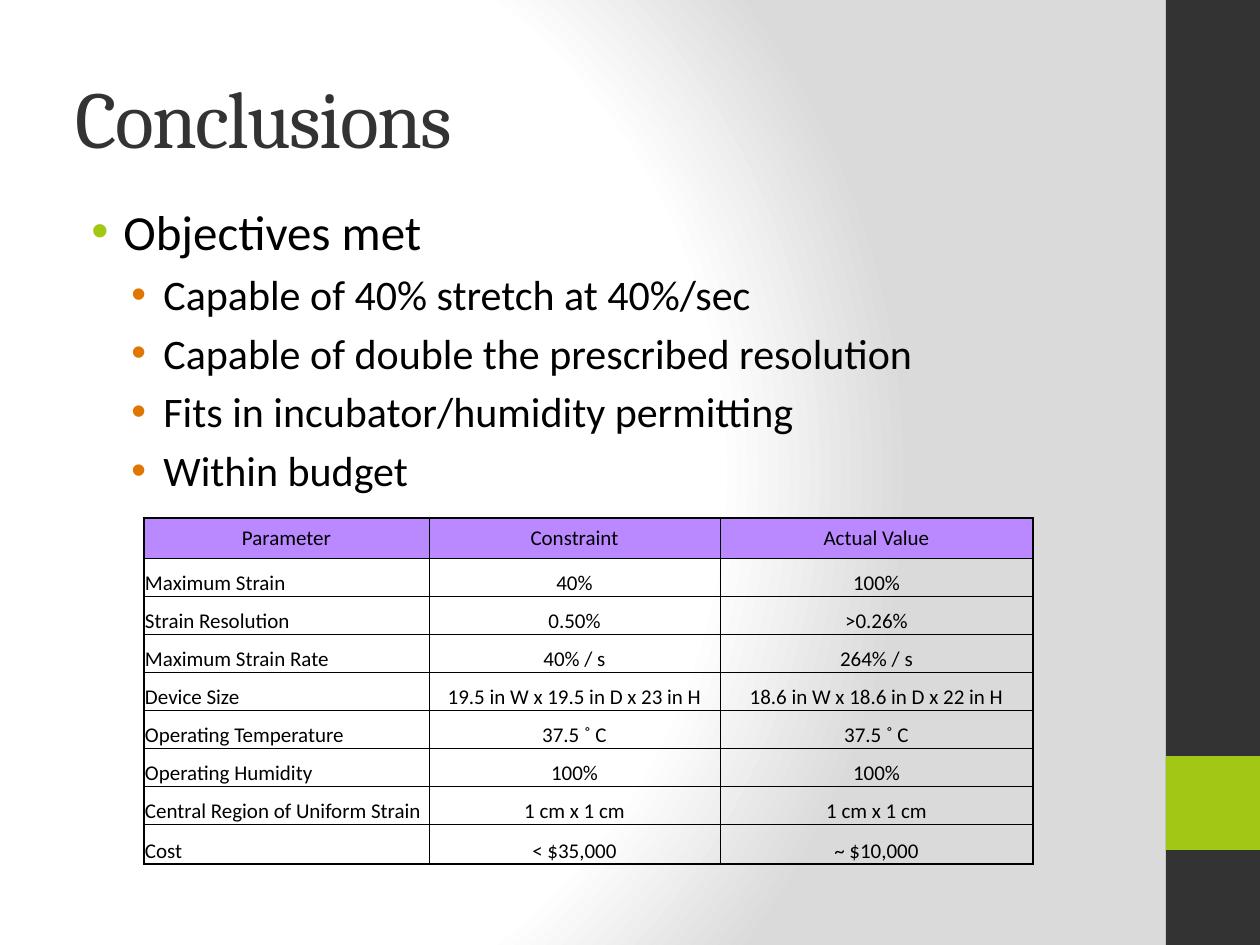
from pptx import Presentation
from pptx.dml.color import RGBColor
from pptx.enum.shapes import MSO_SHAPE
from pptx.enum.text import MSO_ANCHOR, MSO_AUTO_SIZE, PP_ALIGN
from pptx.oxml import parse_xml
from pptx.oxml.ns import nsdecls, qn
from pptx.util import Emu, Pt

RECTANGLE = MSO_SHAPE.RECTANGLE
MIDDLE, BOTTOM = MSO_ANCHOR.MIDDLE, MSO_ANCHOR.BOTTOM
LEFT, CENTER = PP_ALIGN.LEFT, PP_ALIGN.CENTER

BLACK = RGBColor(0x00, 0x00, 0x00)
CHARCOAL = RGBColor(0x33, 0x33, 0x33)
LIME = RGBColor(0xA2, 0xC8, 0x16)
ORANGE = RGBColor(0xE0, 0x76, 0x02)
PURPLE = RGBColor(0xBA, 0x89, 0xFF)
WHITE = RGBColor(0xFF, 0xFF, 0xFF)
GRAY = RGBColor(0xDA, 0xDA, 0xDA)


def px(length):
    return Emu(round(length * 914400 / 126))


def add_run(paragraph, text, font_name, size, color):
    run = paragraph.add_run()
    run.text = text
    run.font.name = font_name
    run.font.size = Pt(size)
    run.font.color.rgb = color
    return run


prs = Presentation()
prs.slide_width, prs.slide_height = px(1260), px(945)
slide = prs.slides.add_slide(prs.slide_layouts[5])

# Background: white glow fading to gray on the right
slide.background.fill.gradient()
gradient = slide.element.find(".//" + qn("a:gradFill"))
stops = "".join(
    f'<a:gs pos="{position * 1000}"><a:srgbClr val="{color}"/></a:gs>'
    for position, color in ((0, WHITE), (75, WHITE), (100, GRAY)))
gradient.getparent().replace(gradient, parse_xml(
    f'<a:gradFill {nsdecls("a")} rotWithShape="1"><a:gsLst>{stops}</a:gsLst>'
    '<a:path path="circle">'
    '<a:fillToRect l="20000" t="50000" r="100000" b="50000"/>'
    '</a:path></a:gradFill>'))

# Side band with accent square
for top, height, color in ((0, 945, CHARCOAL), (756, 94, LIME)):
    band = slide.shapes.add_shape(RECTANGLE, px(1166), px(top), px(94), px(height))
    band.shadow.inherit = False
    band.fill.solid()
    band.fill.fore_color.rgb = color
    band.line.fill.background()

# Title
title = slide.shapes.title
title.left, title.top, title.width, title.height = px(63), px(38), px(1050), px(157)
heading = title.text_frame
heading.auto_size = MSO_AUTO_SIZE.NONE
heading.vertical_anchor = MIDDLE
heading.paragraphs[0].alignment = LEFT
heading_run = add_run(heading.paragraphs[0], "Conclusions", "Cambria", 46, CHARCOAL)
heading_run.font._element.set("spc", "-100")

# Objectives
objectives = slide.shapes.add_textbox(px(63), px(195), px(1050), px(292)).text_frame
objectives.word_wrap = True
levels = [(48, 28, LIME), (88, 24, ORANGE)]
points = [
    (0, "Objectives met"),
    (1, "Capable of 40% stretch at 40%/sec"),
    (1, "Capable of double the prescribed resolution"),
    (1, "Fits in incubator/humidity permitting"),
    (1, "Within budget"),
]
for i, (level, text) in enumerate(points):
    point = objectives.add_paragraph() if i else objectives.paragraphs[0]
    point.level = level
    margin, size, bullet_color = levels[level]
    properties = point._p.get_or_add_pPr()
    properties.set("marL", str(px(margin)))
    properties.set("indent", str(px(-32)))
    for xml in (
        f'<a:spcBef {nsdecls("a")}><a:spcPct val="20000"/></a:spcBef>',
        f'<a:buClr {nsdecls("a")}><a:srgbClr val="{bullet_color}"/></a:buClr>',
        f'<a:buFont {nsdecls("a")} typeface="Arial"/>',
        f'<a:buChar {nsdecls("a")} char="•"/>',
    ):
        properties.append(parse_xml(xml))
    add_run(point, text, "Calibri", size, BLACK)

# Table of constraints and results
results = [
    ("Parameter", "Constraint", "Actual Value"),
    ("Maximum Strain", "40%", "100%"),
    ("Strain Resolution", "0.50%", ">0.26%"),
    ("Maximum Strain Rate", "40% / s", "264% / s"),
    ("Device Size", "19.5 in W x 19.5 in D x 23 in H", "18.6 in W x 18.6 in D x 22 in H"),
    ("Operating Temperature", "37.5 ˚ C", "37.5 ˚ C"),
    ("Operating Humidity", "100%", "100%"),
    ("Central Region of Uniform Strain", "1 cm x 1 cm", "1 cm x 1 cm"),
    ("Cost", "< $35,000", "~ $10,000"),
]
column_widths = [285, 291, 313]
row_heights = [40] + [38] * 7 + [40]
last_row, last_column = len(row_heights) - 1, len(column_widths) - 1
table = slide.shapes.add_table(
    len(row_heights), len(column_widths), px(144), px(518),
    px(sum(column_widths)), px(sum(row_heights))).table
table.first_row = table.horz_banding = False
for column, width in zip(table.columns, column_widths):
    column.width = px(width)
for row, height in zip(table.rows, row_heights):
    row.height = px(height)

for r, values in enumerate(results):
    for c, value in enumerate(values):
        cell = table.cell(r, c)
        cell.margin_left = cell.margin_right = cell.margin_top = px(1)
        cell.margin_bottom = 0
        cell.vertical_anchor = BOTTOM if r else MIDDLE
        if r == 0:
            cell.fill.solid()
            cell.fill.fore_color.rgb = PURPLE
        else:
            cell.fill.background()
        paragraph = cell.text_frame.paragraphs[0]
        paragraph.alignment = LEFT if r and c == 0 else CENTER
        add_run(paragraph, value, "Calibri", 12, BLACK)

        # Thick outer frame, thin inner lines
        outer_sides = [("lnL", c == 0), ("lnR", c == last_column),
                       ("lnT", r == 0), ("lnB", r == last_row)]
        for i, (side, is_outer) in enumerate(outer_sides):
            line_width = Pt(1.5 if is_outer else 0.5)
            cell._tc.get_or_add_tcPr().insert(i, parse_xml(
                f'<a:{side} {nsdecls("a")} w="{line_width}"><a:solidFill>'
                f'<a:srgbClr val="{BLACK}"/></a:solidFill></a:{side}>'))

prs.save("out.pptx")
